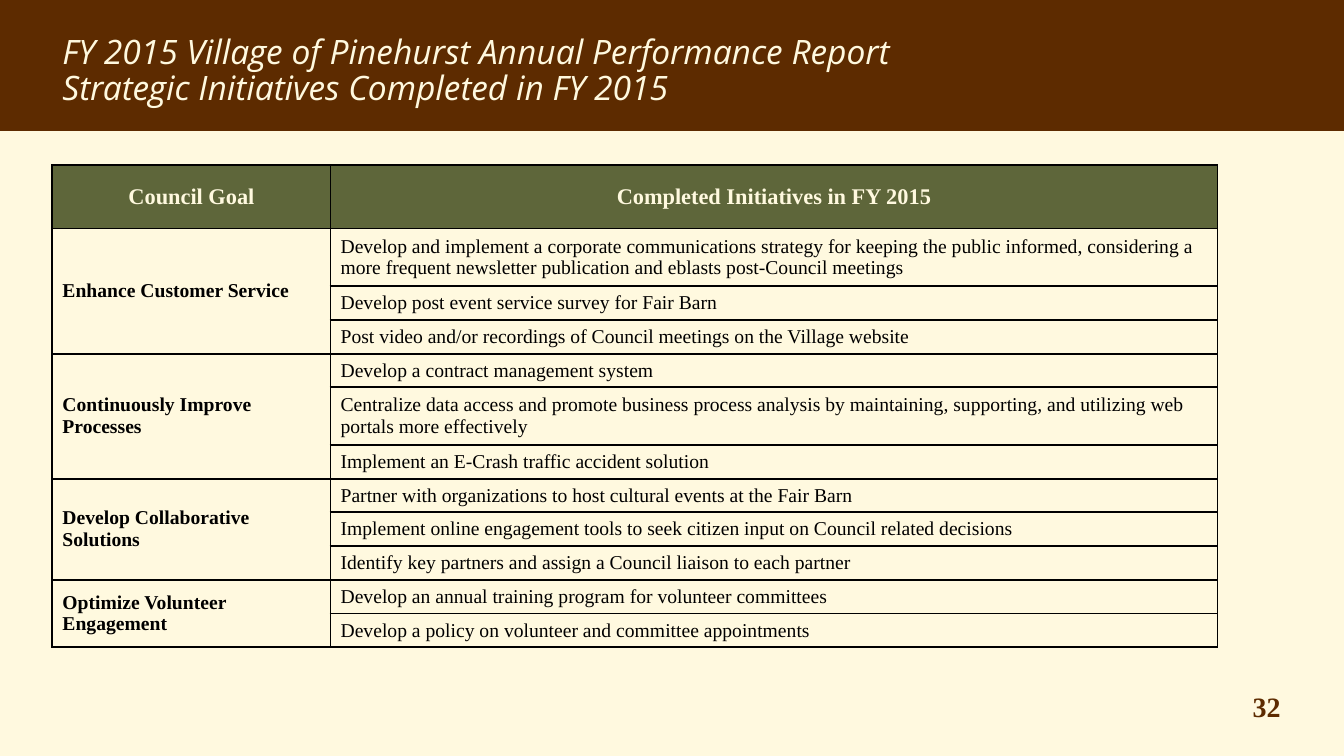
import pptx
import pptx.util
import pptx.dml.color
import pptx.enum.shapes
import pptx.enum.text
from lxml import etree

Cm = pptx.util.Cm
Pt = pptx.util.Pt
align = pptx.enum.text.PP_ALIGN
anchor = pptx.enum.text.MSO_ANCHOR
hues = {"brown": "5D2B00", "cream": "FFF9DF", "green": "5E663A", "black": "000000"}
serif = "Times New Roman"


def tint(name):
    return pptx.dml.color.RGBColor.from_string(hues[name])


def style(para, hue, form):
    for key, value in form.items():
        setattr(para.font, key, value)
    para.font.color.rgb = tint(hue)


deck = pptx.Presentation()
deck.slide_width = Cm(33.87)
deck.slide_height = Cm(19.05)
slide = deck.slides.add_slide(deck.slide_layouts[5])
slide.background.fill.solid()
slide.background.fill.fore_color.rgb = tint("cream")

band = slide.shapes.add_shape(
    pptx.enum.shapes.MSO_SHAPE.RECTANGLE, 0, 0, deck.slide_width, Cm(3.3))
band.shadow.inherit = False
band.fill.solid()
band.fill.fore_color.rgb = tint("brown")
band.line.fill.background()

title = slide.shapes.title
band._element.getparent().insert(2, band._element)
place = {"left": Cm(1.32), "top": Cm(0.64), "width": Cm(31.22), "height": Cm(2.31)}
for key, value in place.items():
    setattr(title, key, value)
frame = title.text_frame
frame.text = ("FY 2015 Village of Pinehurst Annual Performance Report\n"
              "Strategic Initiatives Completed in FY 2015")
frame.auto_size = pptx.enum.text.MSO_AUTO_SIZE.NONE
frame.vertical_anchor = anchor.MIDDLE
for para in frame.paragraphs:
    para.alignment = align.LEFT
    para.line_spacing = 0.9
    para.space_before = Pt(0)
    style(para, "cream", {"name": "Open Sans", "size": Pt(24), "italic": True, "bold": False})

goals = {
    "Enhance Customer Service": [
        "Develop and implement a corporate communications strategy for keeping the public "
        "informed, considering a more frequent newsletter publication and eblasts "
        "post-Council meetings",
        "Develop post event service survey for Fair Barn",
        "Post video and/or recordings of Council meetings on the Village website",
    ],
    "Continuously Improve Processes": [
        "Develop a contract management system",
        "Centralize data access and promote business process analysis by maintaining, "
        "supporting, and utilizing web portals more effectively",
        "Implement an E-Crash traffic accident solution",
    ],
    "Develop Collaborative Solutions": [
        "Partner with organizations to host cultural events at the Fair Barn",
        "Implement online engagement tools to seek citizen input on Council related decisions",
        "Identify key partners and assign a Council liaison to each partner",
    ],
    "Optimize Volunteer Engagement": [
        "Develop an annual training program for volunteer committees",
        "Develop a policy on volunteer and committee appointments",
    ],
}
rows = [("Council Goal", "Completed Initiatives in FY 2015")]
spans = []
for goal, tasks in goals.items():
    spans.append((len(rows), len(rows) + len(tasks) - 1))
    rows += [(goal if i == 0 else "", task) for i, task in enumerate(tasks)]

table = slide.shapes.add_table(
    len(rows), 2, Cm(1.32), Cm(4.16), Cm(29.36), Cm(12.2)).table
table.columns[0].width = Cm(7.01)
table.columns[1].width = Cm(22.35)
for r, texts in enumerate(rows):
    head = r == 0
    long = len(texts[1]) > 100
    table.rows[r].height = Cm(1.6 if head else 1.45 if long else 0.85)
    for c, text in enumerate(texts):
        cell = table.cell(r, c)
        cell.text = text
        cell.vertical_anchor = anchor.MIDDLE
        cell.fill.solid()
        cell.fill.fore_color.rgb = tint("green" if head else "cream")
        para = cell.text_frame.paragraphs[0]
        para.alignment = align.CENTER if head else align.LEFT
        style(para, "cream" if head else "black",
              {"name": serif, "size": Pt(16 if head else 14), "bold": head or c == 0})
        props = cell._tc.get_or_add_tcPr()
        for i, side in enumerate("LRTB"):
            props.insert(i, etree.fromstring(
                f'<a:ln{side} xmlns:a="http://schemas.openxmlformats.org/drawingml/2006/main" '
                f'w="{Pt(1.5)}"><a:solidFill><a:srgbClr val="{hues["black"]}"/>'
                f'</a:solidFill></a:ln{side}>'))
for first, last in spans:
    table.cell(first, 0).merge(table.cell(last, 0))

page = slide.shapes.add_textbox(Cm(31.32), Cm(17.25), Cm(1.75), Cm(1.12)).text_frame
page.word_wrap = True
page.text = "32"
style(page.paragraphs[0], "brown", {"name": serif, "size": Pt(20), "bold": True})

deck.save("out.pptx")
